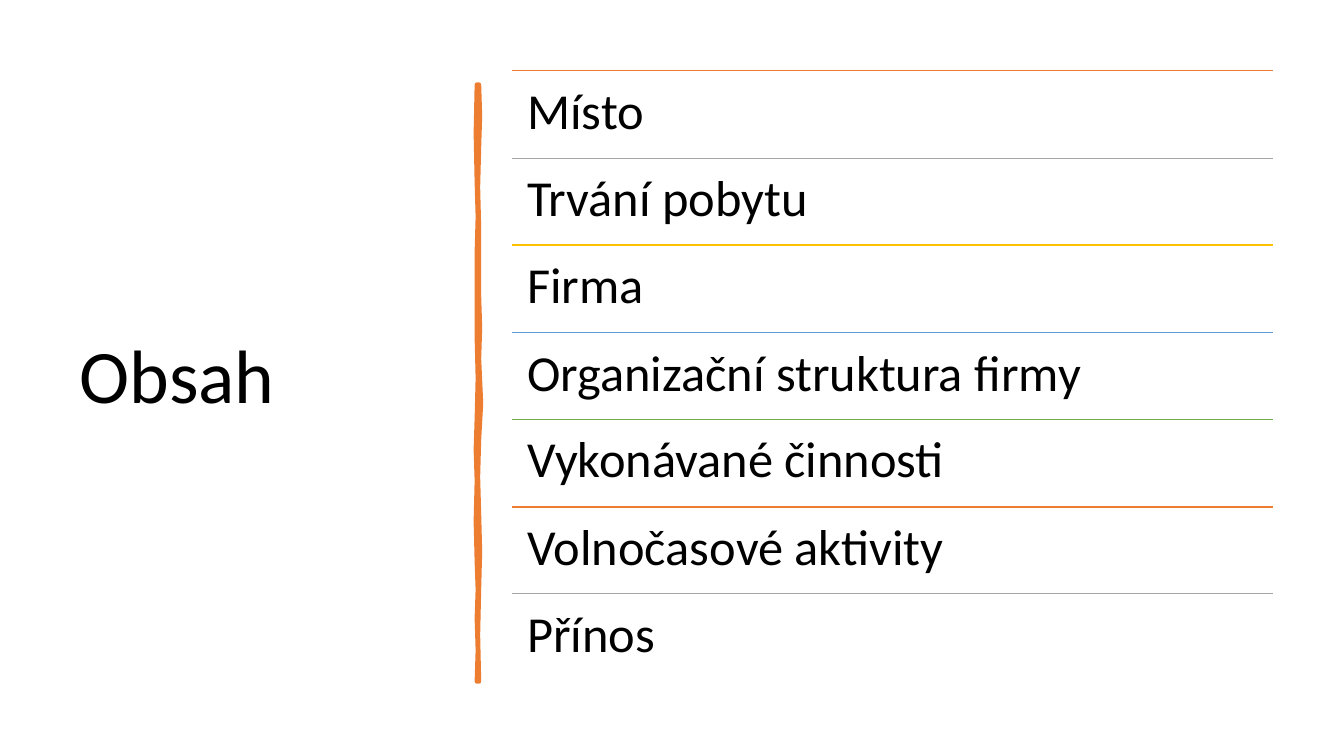
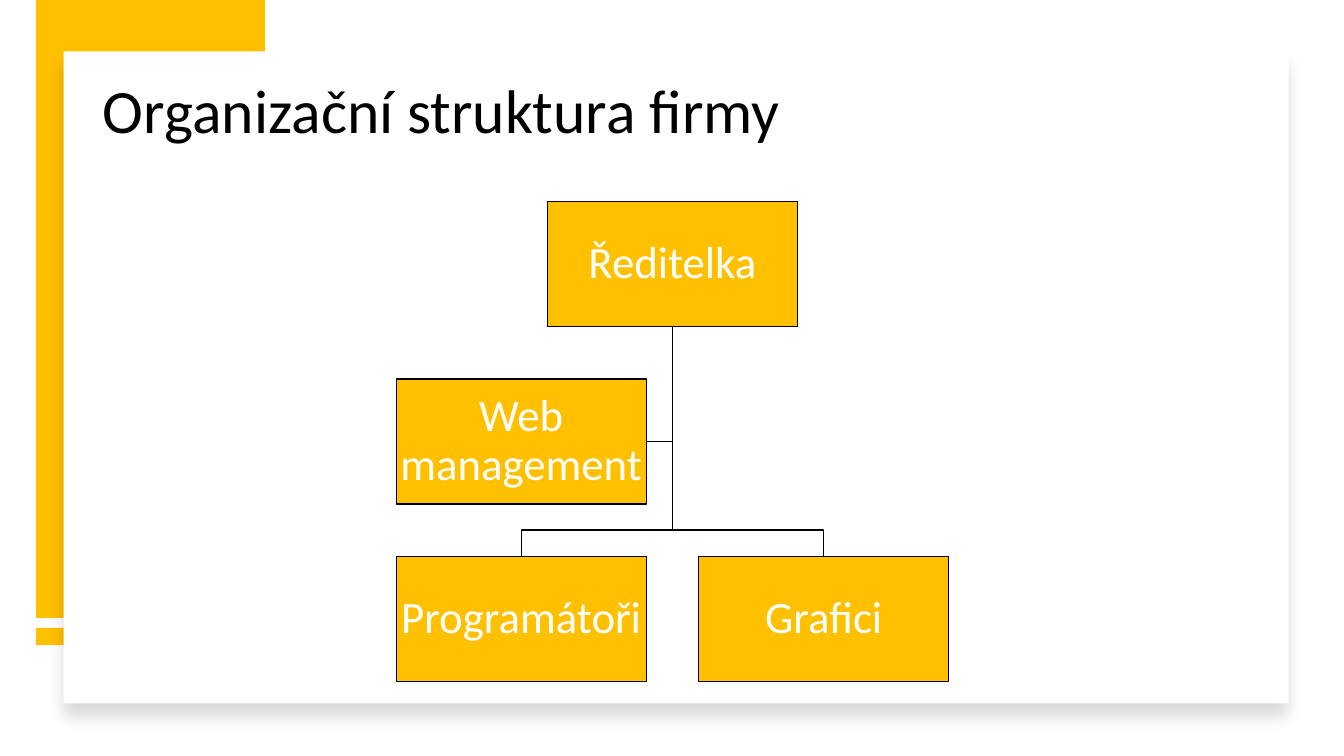
from lxml import etree
from pptx import Presentation
from pptx.dml.color import RGBColor
from pptx.enum.shapes import MSO_CONNECTOR, MSO_SHAPE
from pptx.enum.text import MSO_ANCHOR, MSO_AUTO_SIZE, PP_ALIGN
from pptx.oxml import parse_xml
from pptx.oxml.ns import nsdecls, qn
from pptx.util import Pt

PX = 9144  # EMU; 100 px to the inch
RECTANGLE = MSO_SHAPE.RECTANGLE
STRAIGHT = MSO_CONNECTOR.STRAIGHT
TOP, MIDDLE = MSO_ANCHOR.TOP, MSO_ANCHOR.MIDDLE
LEFT, CENTER = PP_ALIGN.LEFT, PP_ALIGN.CENTER
NO_AUTOFIT = MSO_AUTO_SIZE.NONE

BLACK = RGBColor(0x00, 0x00, 0x00)
WHITE = RGBColor(0xFF, 0xFF, 0xFF)
ORANGE = RGBColor(0xED, 0x7D, 0x31)
GRAY = RGBColor(0xA5, 0xA5, 0xA5)
GOLD = RGBColor(0xFF, 0xC0, 0x00)
BLUE = RGBColor(0x5B, 0x9B, 0xD5)
GREEN = RGBColor(0x70, 0xAD, 0x47)
ACCENTS = [ORANGE, GRAY, GOLD, BLUE, GREEN]

TOPICS = ["Místo", "Trvání pobytu", "Firma", "Organizační struktura firmy",
          "Vykonávané činnosti", "Volnočasové aktivity", "Přínos"]

BRUSH_RIGHT = [(475, 84), (476, 115), (475, 146), (474, 186), (475, 226),
               (475, 294), (476, 325), (475, 356), (477, 400), (475, 436),
               (474, 473), (475, 510), (476, 547), (475, 584), (474, 630),
               (475, 676)]
BRUSH_LEFT = [(473, 676), (474, 645), (473, 613), (474, 585), (473, 557),
              (472, 517), (473, 477), (472, 446), (473, 415), (474, 375),
              (473, 335), (473, 250), (474, 215), (473, 181), (472, 132),
              (473, 84)]


class Deck:
    font = "Calibri"
    line_spacing = 0.9

    def __init__(self):
        self.prs = Presentation()
        self.prs.slide_width, self.prs.slide_height = 1333 * PX, 750 * PX
        self.slide = None

    def new_slide(self):
        self.slide = self.prs.slides.add_slide(self.prs.slide_layouts[5])

    def set_text(self, frame, text, size, color=BLACK, align=LEFT,
                 anchor=MIDDLE, inset=10):
        frame.text = text
        frame.word_wrap = True
        frame.auto_size = NO_AUTOFIT
        frame.vertical_anchor = anchor
        frame.margin_left = frame.margin_right = inset * PX
        frame.margin_top = frame.margin_bottom = inset * PX
        paragraph = frame.paragraphs[0]
        paragraph.alignment = align
        paragraph.line_spacing = self.line_spacing
        font = paragraph.runs[0].font
        font.name, font.size, font.color.rgb = self.font, Pt(size), color

    def title(self, text, x, y, w, h, size):
        """Fill the title placeholder and bring it to the front."""
        title = self.slide.shapes.title
        title.left, title.top = x * PX, y * PX
        title.width, title.height = w * PX, h * PX
        self.set_text(title.text_frame, text, size)
        title.element.getparent().append(title.element)

    def text(self, text, x, y, w, h, size, inset):
        box = self.slide.shapes.add_textbox(x * PX, y * PX, w * PX, h * PX)
        self.set_text(box.text_frame, text, size, anchor=TOP, inset=inset)

    def paint(self, shape, fill=None, line=None, weight=1):
        shape.shadow.inherit = False
        if fill is None:
            shape.fill.background()
        else:
            shape.fill.solid()
            shape.fill.fore_color.rgb = fill
        if line is None:
            shape.line.fill.background()
        else:
            shape.line.color.rgb = line
            shape.line.width = Pt(weight)

    def rect(self, x, y, w, h, fill, line=None):
        shape = self.slide.shapes.add_shape(
            RECTANGLE, x * PX, y * PX, w * PX, h * PX)
        self.paint(shape, fill, line)
        return shape

    def card(self, x, y, w, h):
        """White panel with a soft shadow below it."""
        panel = self.rect(x, y, w, h, WHITE)
        effects = panel.element.spPr.find(qn("a:effectLst"))
        effects.append(parse_xml(
            f'<a:outerShdw {nsdecls("a")} blurRad="{Pt(11)}" dist="{Pt(10)}" '
            'dir="5400000" algn="ctr" rotWithShape="0"><a:srgbClr val="000000">'
            '<a:alpha val="15000"/></a:srgbClr></a:outerShdw>'))

    def rule(self, x1, y1, x2, y2, color):
        line = self.slide.shapes.add_connector(
            STRAIGHT, x1 * PX, y1 * PX, x2 * PX, y2 * PX)
        line.line.color.rgb = color
        line.line.width = Pt(1)
        etree.SubElement(line.element.spPr, qn("a:effectLst"))

    def outline(self, points, line, fill=None, weight=1):
        """Draw through the points, closing the shape when it has a fill."""
        builder = self.slide.shapes.build_freeform(*points[0], scale=PX)
        builder.add_line_segments(points[1:], close=fill is not None)
        self.paint(builder.convert_to_shape(), fill, line, weight)

    def node(self, text, center, top, w, h):
        box = self.rect(center - w // 2, top, w, h, GOLD, BLACK)
        self.set_text(box.text_frame, text, 32, WHITE, CENTER, inset=2)


def contents_slide(deck):
    deck.new_slide()
    deck.title("Obsah", 69, 70, 374, 611, 54)
    deck.outline(BRUSH_RIGHT + BRUSH_LEFT, ORANGE, ORANGE, 3.25)
    left, top, width, height = 508, 70, 755, 606
    for i, topic in enumerate(TOPICS):
        y = top + round(i * height / len(TOPICS))
        deck.rule(left, y, left + width, y, ACCENTS[i % len(ACCENTS)])
        deck.text(topic, left, y, width, 86, 36, 15)


def organization_slide(deck):
    deck.new_slide()
    deck.rect(36, 623, 227, 17, GOLD)
    deck.rect(36, 0, 227, 613, GOLD)
    deck.card(63, 51, 1215, 647)
    deck.title("Organizační struktura firmy", 92, 40, 1150, 145, 44)

    w, h, gap = 248, 124, 52
    middle, spread = 667, (w + gap) // 2
    director_top, assistant_top, team_top = (200 + i * (h + gap)
                                             for i in range(3))
    trunk_top, bus = director_top + h, team_top - gap // 2
    assistant_middle = assistant_top + h // 2
    deck.outline([(middle, trunk_top), (middle, assistant_middle),
                  (middle - gap // 2, assistant_middle)], BLACK)
    teams = {"Programátoři": middle - spread, "Grafici": middle + spread}
    for center in teams.values():
        deck.outline([(middle, trunk_top), (middle, bus), (center, bus),
                      (center, team_top)], BLACK)
    deck.node("Ředitelka", middle, director_top, w, h)
    deck.node("Web management", middle - spread, assistant_top, w, h)
    for team, center in teams.items():
        deck.node(team, center, team_top, w, h)


def main():
    deck = Deck()
    contents_slide(deck)
    organization_slide(deck)
    deck.prs.save("out.pptx")


if __name__ == "__main__":
    main()
